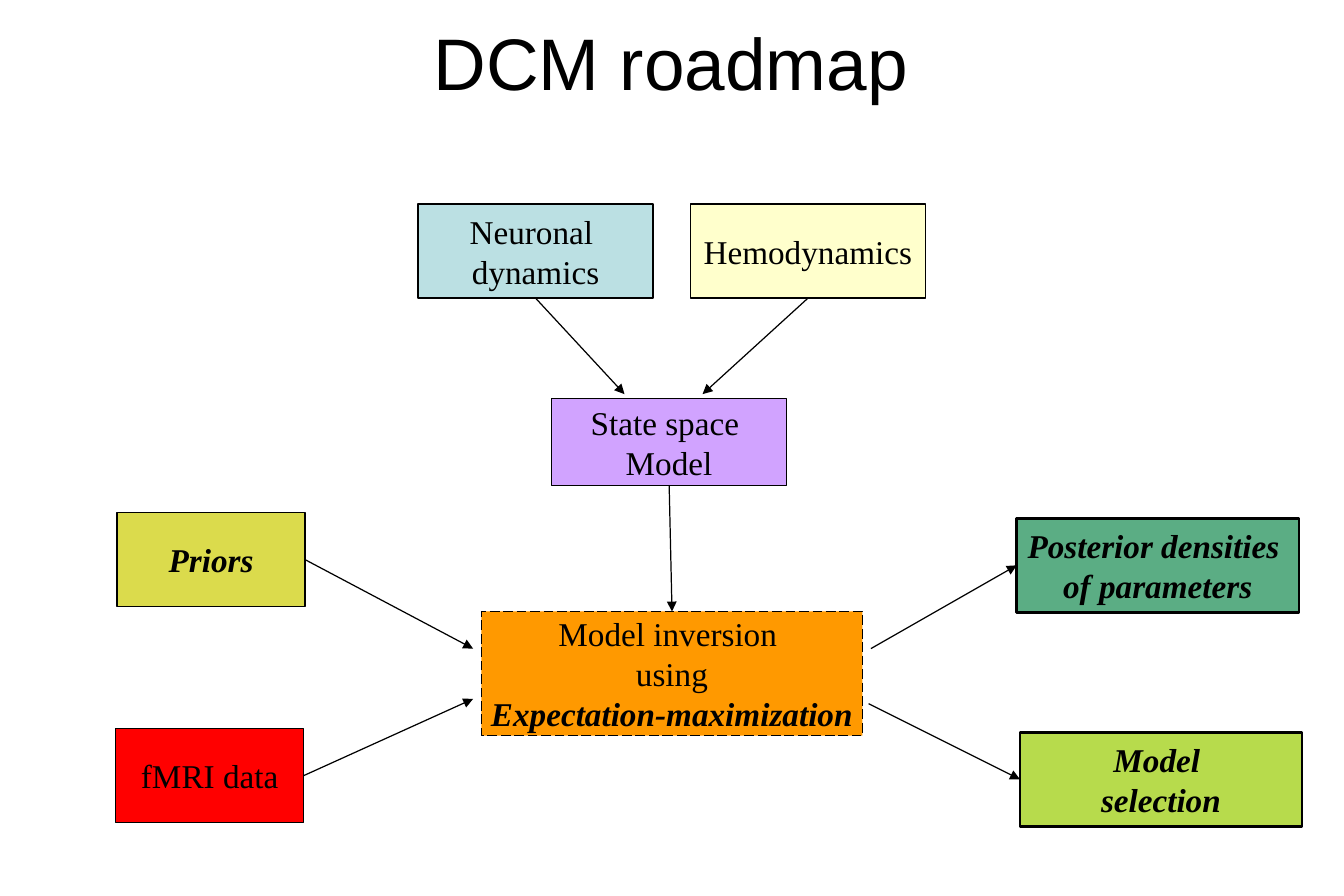
from dataclasses import dataclass

from lxml import etree
from pptx import Presentation
from pptx.dml.color import RGBColor
from pptx.enum import dml, shapes, text
from pptx.oxml.ns import qn
from pptx.util import Cm, Pt


@dataclass(frozen=True)
class Theme:
    ink: str = "000000"
    paper: str = "FFFFFF"
    red: str = "FF0000"
    green: str = "339966"
    blue: str = "BBE0E3"
    cream: str = "FFFFCC"
    lime: str = "99CC00"
    orange: str = "FF9900"
    violet: str = "CC99FF"
    olive: str = "CCCC00"
    head: str = "Arial"
    body: str = "Times New Roman"
    big: int = 44
    small: int = 20
    thin: float = 0.75
    thick: float = 1.5


def rgb(code):
    return RGBColor.from_string(code)


def write(frame, lines, font, size, color, strong=None, wrap=False):
    """Set one paragraph per line; lines from index strong on are bold italic."""
    frame.word_wrap = wrap
    frame.vertical_anchor = text.MSO_ANCHOR.MIDDLE
    for i, line in enumerate(lines):
        para = frame.paragraphs[0] if i == 0 else frame.add_paragraph()
        para.alignment = text.PP_ALIGN.CENTER
        run = para.add_run()
        run.text = line
        run.font.name = font
        run.font.size = Pt(size)
        run.font.color.rgb = rgb(color)
        run.font.bold = run.font.italic = strong is not None and i >= strong


class Deck:
    def __init__(self, theme, wide, high):
        self.theme = theme
        self.file = Presentation()
        self.file.slide_width = Cm(wide)
        self.file.slide_height = Cm(high)
        self.slide = self.file.slides.add_slide(self.file.slide_layouts[5])
        fill = self.slide.background.fill
        fill.solid()
        fill.fore_color.rgb = rgb(theme.paper)

    def title(self, line, x, y, w, h):
        shape = self.slide.shapes.title
        shape.left, shape.top, shape.width, shape.height = map(Cm, (x, y, w, h))
        write(shape.text_frame, [line], self.theme.head, self.theme.big,
              self.theme.ink, wrap=True)

    def box(self, lines, x, y, w, h, fill, alpha=100, thick=False, dash=False, strong=None):
        t = self.theme
        shape = self.slide.shapes.add_shape(
            shapes.MSO_SHAPE.RECTANGLE, *map(Cm, (x, y, w, h)))
        shape.shadow.inherit = False
        shape.fill.solid()
        shape.fill.fore_color.rgb = rgb(fill)
        if alpha < 100:
            color = shape.fill._xPr.find(".//" + qn("a:srgbClr"))
            etree.SubElement(color, qn("a:alpha"), val=str(alpha * 1000))
        shape.line.color.rgb = rgb(t.ink)
        shape.line.width = Pt(t.thick if thick else t.thin)
        if dash:
            shape.line.dash_style = dml.MSO_LINE.LONG_DASH
        write(shape.text_frame, lines, t.body, t.small, t.ink, strong=strong)
        return shape

    def arrow(self, start, end):
        """Draw an arrow; each end is an (x, y) point or a (box, side) joint."""
        line = self.slide.shapes.add_connector(
            shapes.MSO_CONNECTOR.STRAIGHT, 0, 0, 0, 0)
        if isinstance(start[0], (int, float)):
            line.begin_x, line.begin_y = map(Cm, start)
        else:
            line.begin_connect(*start)
        if isinstance(end[0], (int, float)):
            line.end_x, line.end_y = map(Cm, end)
        else:
            line.end_connect(*end)
        line.line.color.rgb = rgb(self.theme.ink)
        line.line.width = Pt(self.theme.thin)
        etree.SubElement(line.line._get_or_add_ln(), qn("a:tailEnd"), type="triangle")
        etree.SubElement(line._element.spPr, qn("a:effectLst"))


def main():
    t = Theme()
    deck = Deck(t, 28.58, 19.05)
    deck.title("DCM roadmap", 1.42, -0.28, 25.7, 3.18)

    data = deck.box(["fMRI data"], 2.46, 15.49, 4, 2, t.red)
    dense = deck.box(["Posterior densities ", "of parameters"], 21.62, 11.02, 6, 2,
                     t.green, alpha=80, thick=True, strong=0)
    neural = deck.box(["Neuronal ", "dynamics"], 8.89, 4.34, 5, 2, t.blue)
    hemo = deck.box(["Hemodynamics"], 14.68, 4.34, 5, 2, t.cream)
    choice = deck.box(["Model ", "selection"], 21.69, 15.57, 6, 2,
                      t.lime, alpha=70, thick=True, strong=0)
    fit = deck.box(["Model inversion ", "using", "Expectation-maximization"],
                   10.24, 13, 8.1, 2.64, t.orange, dash=True, strong=2)
    state = deck.box(["State space ", "Model"], 11.73, 8.48, 5, 1.85, t.violet, alpha=90)
    prior = deck.box(["Priors"], 2.49, 10.9, 4, 2, t.olive, alpha=70, strong=0)

    top, left, bottom, right = range(4)
    for start, end in [
        ((prior, right), (10.06, 13.79)),
        ((data, right), (10.06, 14.86)),
        ((18.52, 13.79), (dense, left)),
        ((18.47, 14.96), (choice, left)),
        ((neural, bottom), (13.28, 8.38)),
        ((hemo, bottom), (14.94, 8.38)),
        ((state, bottom), (fit, top)),
    ]:
        deck.arrow(start, end)
    deck.file.save("out.pptx")


if __name__ == "__main__":
    main()
